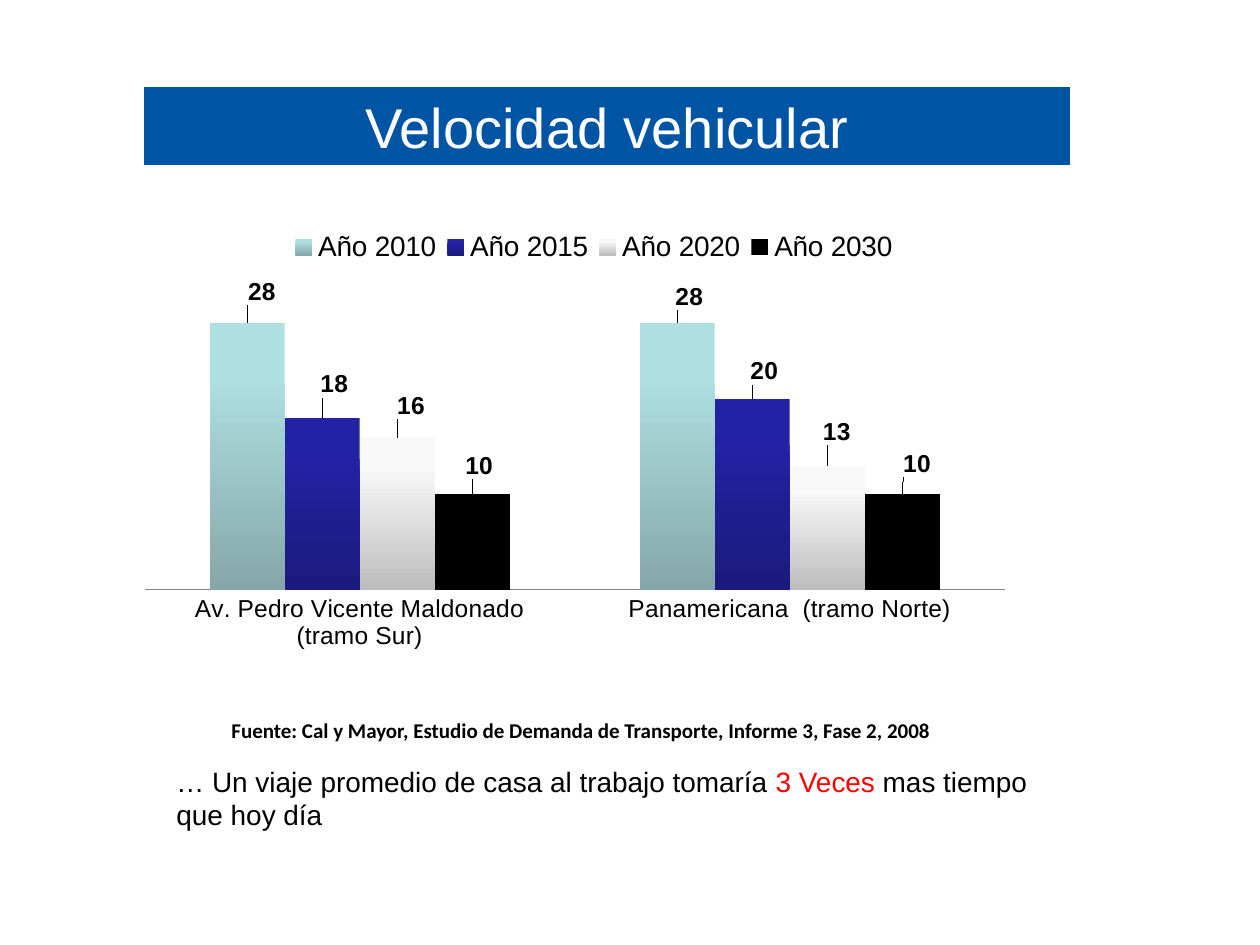
"""Build the slide on vehicle speed, with a column chart by road and year."""
from lxml import etree
from pptx import Presentation
from pptx import util as u
from pptx.chart.data import CategoryChartData
from pptx.dml.color import RGBColor
from pptx.enum import chart as c
from pptx.enum import text as t
from pptx.oxml.ns import qn

WHITE = RGBColor(0xFF, 0xFF, 0xFF)
BLACK = RGBColor(0, 0, 0)
RED = RGBColor(0xFF, 0, 0)
BLUE = RGBColor(0, 0x54, 0xA4)
GREY = RGBColor(0x86, 0x86, 0x86)

TITLE = "Velocidad vehicular"
SOURCE = [("Fuente: Cal y Mayor, Estudio de Demanda de Transporte, Informe 3, Fase 2, 2008", BLACK)]
MESSAGE = [
    ("… Un viaje promedio de casa al trabajo tomaría ", BLACK),
    ("3 Veces", RED),
    (" mas tiempo que hoy día", BLACK),
]
ROADS = ["Av. Pedro Vicente Maldonado (tramo Sur)", "Panamericana  (tramo Norte)"]
SERIES = [
    ("Año 2010", (28, 28), RGBColor(0xAE, 0xDF, 0xE1), RGBColor(0x86, 0xA7, 0xA9)),
    ("Año 2015", (18, 20), RGBColor(0x22, 0x22, 0xA5), RGBColor(0x1B, 0x1B, 0x7D)),
    ("Año 2020", (16, 13), RGBColor(0xF8, 0xF8, 0xF8), RGBColor(0xBD, 0xBD, 0xBD)),
    ("Año 2030", (10, 10), BLACK, BLACK),
]
LABEL_SHIFTS = [
    [(15, -12), (12, -7)],
    [(12, -15), (12, -9)],
    [(14, -13), (10, -15)],
    [(7, -10), (15, -12)],
]

TITLE_BOX = (144, 87, 926, 78)
CHART_BOX = (144, 175, 873, 554)
SOURCE_BOX = (219, 711, 738, 38)
MESSAGE_BOX = (164, 758, 898, 81)
PLOT = dict(layoutTarget="inner", xMode="edge", yMode="edge", x=0, y=0.232, w=0.986, h=0.517)
LEGEND = dict(xMode="edge", yMode="edge", x=0.16, y=0.1, w=0.71, h=0.06)


def px(length):
    return u.Emu(round(length * 914400 / 126))


def box(lengths):
    return [px(length) for length in lengths]


def set_font(font, size, color=BLACK, bold=False, name="Arial"):
    font.size, font.bold, font.name = u.Pt(size), bold, name
    font.color.rgb = color


def add_text(slide, place, runs, size, bold=False, name="Arial"):
    frame = slide.shapes.add_textbox(*box(place)).text_frame
    frame.word_wrap = True
    paragraph = frame.paragraphs[0]
    set_font(paragraph.font, size, bold=bold, name=name)
    for words, color in runs:
        run = paragraph.add_run()
        run.text = words
        run.font.color.rgb = color


def set_layout(parent, after, settings):
    for old in parent.findall(qn("c:layout")):
        parent.remove(old)
    layout = etree.Element(qn("c:layout"))
    manual = etree.SubElement(layout, qn("c:manualLayout"))
    for key, value in settings.items():
        etree.SubElement(manual, qn("c:" + key)).set("val", str(value))
    if after:
        parent.find(qn(after)).addnext(layout)
    else:
        parent.insert(0, layout)


def format_series(series, top, bottom, shifts):
    fill = series.format.fill
    fill.gradient()
    fill.gradient_angle = 270
    for stop, color, position in zip(fill.gradient_stops, (top, bottom), (0.2, 1)):
        stop.color.rgb = color
        stop.position = position
    labels = series.data_labels
    labels.show_value = True
    set_font(labels.font, 14, bold=True)
    for index, (right, down) in enumerate(shifts):
        label = series.points[index].data_label
        set_font(label.font, 14, bold=True)
        label.position = c.XL_LABEL_POSITION.OUTSIDE_END
        shift = dict(x=round(right / CHART_BOX[2], 3), y=round(down / CHART_BOX[3], 3))
        set_layout(labels._element.findall(qn("c:dLbl"))[index], "c:idx", shift)


def add_speed_chart(slide):
    data = CategoryChartData()
    data.categories = ROADS
    for name, values, *_ in SERIES:
        data.add_series(name, values)
    chart = slide.shapes.add_chart(
        c.XL_CHART_TYPE.COLUMN_CLUSTERED, *box(CHART_BOX), data).chart
    set_font(chart.font, 10)
    chart.has_title = False
    plot = chart.plots[0]
    plot.gap_width, plot.overlap = 173, 0
    plot.vary_by_categories = False
    for series, (_, _, top, bottom), shifts in zip(plot.series, SERIES, LABEL_SHIFTS):
        format_series(series, top, bottom, shifts)

    roads, speeds = chart.category_axis, chart.value_axis
    roads.major_tick_mark = c.XL_TICK_MARK.NONE
    roads.format.line.color.rgb = GREY
    set_font(roads.tick_labels.font, 14)
    speeds.minimum_scale, speeds.maximum_scale = 0, 30
    speeds.has_major_gridlines = False
    speeds.visible = False

    chart.has_legend = True
    legend = chart.legend
    legend.position = c.XL_LEGEND_POSITION.TOP
    legend.include_in_layout = False
    set_font(legend.font, 16)
    set_layout(legend._element, "c:legendPos", LEGEND)
    set_layout(chart._chartSpace.chart.plotArea, None, PLOT)


def main():
    presentation = Presentation()
    presentation.slide_width, presentation.slide_height = px(1260), px(945)
    slide = presentation.slides.add_slide(presentation.slide_layouts[5])

    add_text(slide, SOURCE_BOX, SOURCE, 12, bold=True, name="Calibri")
    add_text(slide, MESSAGE_BOX, MESSAGE, 16)

    title = slide.shapes.title
    title.left, title.top, title.width, title.height = box(TITLE_BOX)
    title.fill.solid()
    title.fill.fore_color.rgb = BLUE
    title.text_frame.text = TITLE
    title.text_frame.vertical_anchor = t.MSO_ANCHOR.MIDDLE
    paragraph = title.text_frame.paragraphs[0]
    paragraph.alignment = t.PP_ALIGN.CENTER
    set_font(paragraph.font, 32, WHITE)

    add_speed_chart(slide)
    presentation.save("out.pptx")


if __name__ == "__main__":
    main()
